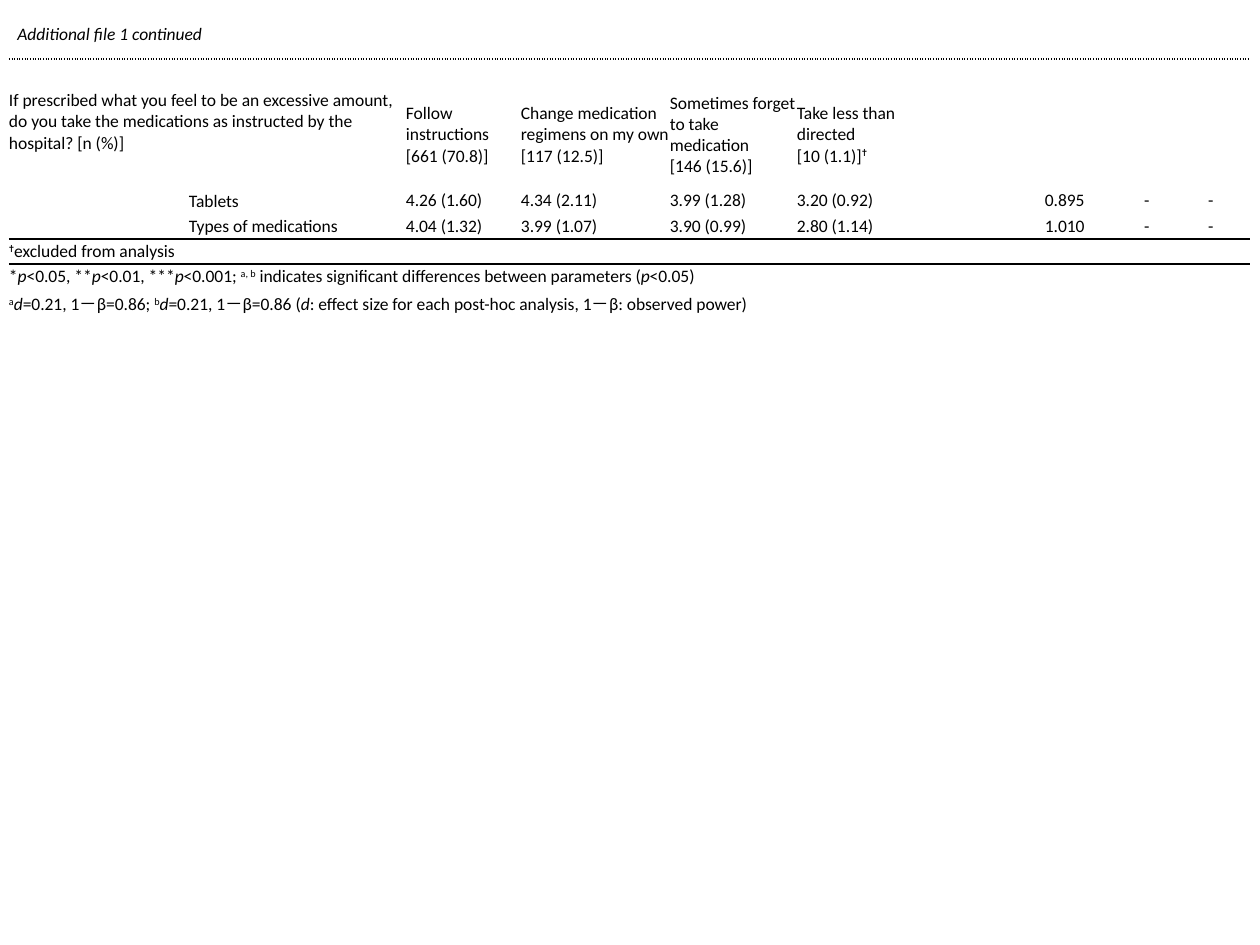
import lxml.etree
import pptx
import pptx.dml.color
import pptx.enum.text
import pptx.oxml.ns
import pptx.util

PX = 914400 / 126
COLUMNS = [179, 218, 115, 149, 127, 125, 123, 77, 50, 78]
ROWS = [23, 106, 26, 25, 25, 25, 28]
HEADER_ROW, FIRST_DATA_ROW, LAST_DATA_ROW, FIRST_NOTE_ROW = 1, 2, 3, 4
CENTRED_COLUMNS = (8, 9)
NO_STYLE = "{2D5ABB26-0587-4C30-8999-92F81FD0307C}"

QUESTION = (
    "If prescribed what you feel to be an excessive amount, do you take "
    "the medications as instructed by the hospital? [n (%)]"
)
ANSWERS = [
    [[("Follow\vinstructions [661 (70.8)]", "")]],
    [[("Change medication regimens on my own [117 (12.5)]", "")]],
    [[("Sometimes forget to take medication", "")], [("[146 (15.6)]", "")]],
    [[("Take less than directed", "")], [("[10 (1.1)]", ""), ("✝", "super")]],
]
MEASURES = [
    ["Tablets", "4.26 (1.60)", "4.34 (2.11)", "3.99 (1.28)", "3.20 (0.92)", "", "0.895", "-", "-"],
    ["Types of medications", "4.04 (1.32)", "3.99 (1.07)", "3.90 (0.99)", "2.80 (1.14)", "", "1.010", "-", "-"],
]
NOTES = [
    [("✝", "super"), ("excluded from analysis", "")],
    [
        ("*", ""), ("p", "italic"), ("<0.05, **", ""), ("p", "italic"),
        ("<0.01, ***", ""), ("p", "italic"), ("<0.001; ", ""), ("a, b", "super"),
        (" indicates significant differences between parameters (", ""),
        ("p", "italic"), ("<0.05)", ""),
    ],
    [
        ("a", "super"), ("d", "italic"), ("=0.21, 1－β=0.86; ", ""),
        ("b", "super"), ("d", "italic"), ("=0.21, 1－β=0.86 (", ""), ("d", "italic"),
        (": effect size for each post-hoc analysis, 1－β: observed power)", ""),
    ],
]


def px(length):
    return pptx.util.Emu(round(length * PX))


def colour(value):
    return pptx.dml.color.RGBColor.from_string(value)


class Page:
    font = "Calibri"
    size = 10
    ink = "000000"

    def __init__(self, deck):
        self.slide = deck.slides.add_slide(deck.slide_layouts[6])

    def fill_text(self, frame, paragraphs):
        for index, spans in enumerate(paragraphs):
            para = frame.add_paragraph() if index else frame.paragraphs[0]
            for text, style in spans:
                start = len(para.runs)
                for line_index, line in enumerate(text.split("\v")):
                    if line_index:
                        para.add_line_break()
                    para.add_run().text = line
                for span in para.runs[start:]:
                    span.font.name = self.font
                    span.font.size = pptx.util.Pt(self.size)
                    span.font.color.rgb = colour(self.ink)
                    span.font.italic = style == "italic"
                    if style == "super":
                        span._r.get_or_add_rPr().set("baseline", "30000")

    def text(self, left, top, width, height, spans):
        box = self.slide.shapes.add_textbox(px(left), px(top), px(width), px(height))
        box.text_frame.word_wrap = False
        self.fill_text(box.text_frame, [spans])

    def table(self, left, top, columns, rows):
        frame = self.slide.shapes.add_table(
            len(rows), len(columns), px(left), px(top), px(sum(columns)), px(sum(rows))
        )
        table = frame.table
        table.first_row = table.horz_banding = False
        table._tbl.tblPr.find(pptx.oxml.ns.qn("a:tableStyleId")).text = NO_STYLE
        for column, width in zip(table.columns, columns):
            column.width = px(width)
        for row, height in zip(table.rows, rows):
            row.height = px(height)
        for cell in table.iter_cells():
            cell.margin_left = cell.margin_right = cell.margin_top = cell.margin_bottom = 0
            cell.vertical_anchor = pptx.enum.text.MSO_ANCHOR.MIDDLE
            cell.fill.background()
        return table

    def cell(self, cell, paragraphs, centred=False):
        self.fill_text(cell.text_frame, paragraphs)
        if centred:
            cell.text_frame.paragraphs[0].alignment = pptx.enum.text.PP_ALIGN.CENTER

    def rule(self, table, row, side, dash="solid"):
        qn = pptx.oxml.ns.qn
        for cell in table.rows[row].cells:
            line = lxml.etree.Element(qn(f"a:ln{side}"), w=str(pptx.util.Pt(1)))
            fill = lxml.etree.SubElement(line, qn("a:solidFill"))
            lxml.etree.SubElement(fill, qn("a:srgbClr"), val=self.ink)
            lxml.etree.SubElement(line, qn("a:prstDash"), val=dash)
            cell._tc.get_or_add_tcPr().insert(0, line)

    def shrink_empty_cells(self, table):
        for cell in table.iter_cells():
            if not cell.text_frame.text:
                para = cell.text_frame.paragraphs[0]
                lxml.etree.SubElement(
                    para._p, pptx.oxml.ns.qn("a:endParaRPr"), sz=str(self.size * 100)
                )


def main():
    deck = pptx.Presentation()
    deck.slide_width, deck.slide_height = px(1260), px(945)
    page = Page(deck)

    table = page.table(9, 59, COLUMNS, ROWS)
    question = table.cell(HEADER_ROW, 0)
    question.merge(table.cell(HEADER_ROW, 1))
    question.margin_bottom = px(26)
    page.cell(question, [[(QUESTION, "")]])
    for column, answer in enumerate(ANSWERS, 2):
        page.cell(table.cell(HEADER_ROW, column), answer)

    for row, values in enumerate(MEASURES, FIRST_DATA_ROW):
        label = table.cell(row, 1)
        label.margin_left = label.margin_right = label.margin_top = px(1)
        for column, value in enumerate(values, 1):
            if value:
                page.cell(table.cell(row, column), [[(value, "")]], column in CENTRED_COLUMNS)

    for row, note in enumerate(NOTES, FIRST_NOTE_ROW):
        last_column = 1 if row == FIRST_NOTE_ROW else len(COLUMNS) - 1
        table.cell(row, 0).merge(table.cell(row, last_column))
        page.cell(table.cell(row, 0), [note])

    page.rule(table, 0, "T", "sysDot")
    page.rule(table, LAST_DATA_ROW, "B")
    page.rule(table, FIRST_NOTE_ROW, "T")
    page.shrink_empty_cells(table)

    page.text(5, 17, 213, 34, [("Additional file 1 continued", "italic")])
    deck.save("out.pptx")


if __name__ == "__main__":
    main()
